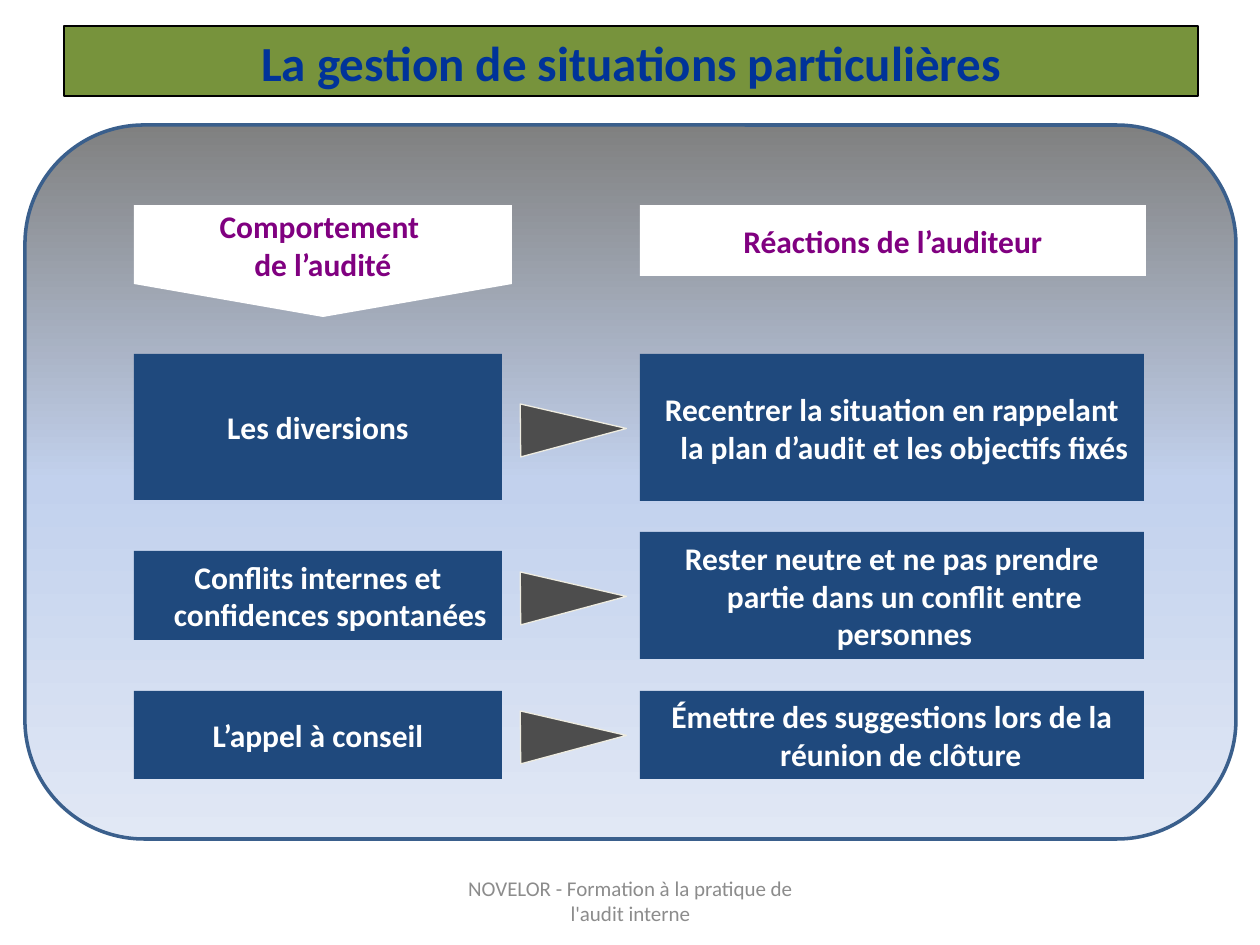
"""Build the slide on handling particular audit situations."""
from copy import deepcopy
from typing import NamedTuple, Optional

from pptx import Presentation
from pptx.dml.color import RGBColor
from pptx.enum.shapes import MSO_SHAPE
from pptx.enum.text import MSO_ANCHOR, PP_ALIGN
from pptx.util import Inches, Pt

EMU_PER_PX = Inches(1) / 126
FONT = "Calibri"
INDENT = 25
COLORS = {
    "title_fill": "77933C", "title_text": "003399", "black": "000000",
    "panel_line": "3A5F8C", "footer": "8C8C8C", "box": "1F497D",
    "white": "FFFFFF", "heading": "800080", "arrow": "4D4D4D",
    "arrow_line": "EEECE1",
}
PANEL_STOPS = [(0, "808080"), (0.5, "C2D1ED"), (1, "E1E8F5")]


class Box(NamedTuple):
    x: int
    y: int
    w: int
    h: int


class Row(NamedTuple):
    behaviour: str
    reaction: str
    left_y: int
    left_h: int
    right_y: int
    right_h: int
    arrow_y: int


ROWS = [
    Row("Les diversions",
        "Recentrer la situation en rappelant la plan d’audit et les objectifs fixés",
        354, 146, 354, 147, 430),
    Row("Conflits internes et confidences spontanées",
        "Rester neutre et ne pas prendre partie dans un conflit entre personnes",
        551, 89, 532, 127, 598),
    Row("L’appel à conseil",
        "Émettre des suggestions lors de la réunion de clôture ",
        691, 88, 691, 88, 737),
]
LEFT_X, LEFT_W = 134, 368
RIGHT_X, RIGHT_W = 640, 504
ARROW_X, ARROW_W, ARROW_H = 573, 53, 106


def px(n: int) -> int:
    return round(n * EMU_PER_PX)


def rgb(name: str) -> RGBColor:
    return RGBColor.from_string(COLORS[name])


def add_shape(s, kind: MSO_SHAPE, box: Box, fill: Optional[str] = None,
              line: Optional[str] = None, width: float = 0.75):
    sp = s.shapes.add_shape(kind, *map(px, box))
    sp.shadow.inherit = False
    if fill:
        sp.fill.solid()
        sp.fill.fore_color.rgb = rgb(fill)
    if line:
        sp.line.color.rgb = rgb(line)
        sp.line.width = Pt(width)
    else:
        sp.line.fill.background()
    return sp


def set_text(sp, text: str, size: int, color: str, bold: bool = True,
             wrap: bool = True, hanging: bool = False,
             anchor: MSO_ANCHOR = MSO_ANCHOR.MIDDLE) -> None:
    tf = sp.text_frame
    tf.text = text
    tf.word_wrap = wrap
    tf.vertical_anchor = anchor
    for p in tf.paragraphs:
        p.alignment = PP_ALIGN.CENTER
        if hanging:
            pPr = p._p.get_or_add_pPr()
            pPr.set("marL", str(px(INDENT)))
            pPr.set("indent", str(-px(INDENT)))
        for r in p.runs:
            r.font.name = FONT
            r.font.size = Pt(size)
            r.font.bold = bold
            r.font.color.rgb = rgb(color)


def add_panel(s) -> None:
    sp = add_shape(s, MSO_SHAPE.ROUNDED_RECTANGLE, Box(25, 125, 1211, 714),
                   line="panel_line", width=2)
    sp.fill.gradient()
    sp.fill.gradient_angle = 270
    stops = sp._element.spPr.xpath("a:gradFill/a:gsLst")[0]
    stops.append(deepcopy(stops[-1]))
    for stop, (position, color) in zip(sp.fill.gradient_stops, PANEL_STOPS):
        stop.position = position
        stop.color.rgb = RGBColor.from_string(color)


def add_heading(s, box: Box, text: str) -> None:
    sp = add_shape(s, MSO_SHAPE.RECTANGLE, box, "white")
    set_text(sp, text, 18, "heading", wrap=False)


def add_row(s, row: Row) -> None:
    for text, box in (
        (row.behaviour, Box(LEFT_X, row.left_y, LEFT_W, row.left_h)),
        (row.reaction, Box(RIGHT_X, row.right_y, RIGHT_W, row.right_h)),
    ):
        sp = add_shape(s, MSO_SHAPE.RECTANGLE, box, "box")
        set_text(sp, text, 18, "white", hanging=True)
    box = Box(ARROW_X - ARROW_W // 2, row.arrow_y - ARROW_H // 2, ARROW_W, ARROW_H)
    arrow = add_shape(s, MSO_SHAPE.ISOSCELES_TRIANGLE, box, "arrow", "arrow_line")
    arrow.adjustments[0] = 0.48
    arrow.rotation = 89.5


def main() -> None:
    prs = Presentation()
    prs.slide_width, prs.slide_height = Inches(10), Inches(7.5)
    s = prs.slides.add_slide(prs.slide_layouts[6])

    add_panel(s)
    footer = s.shapes.add_textbox(*map(px, Box(431, 876, 399, 50)))
    set_text(footer, "NOVELOR - Formation à la pratique de l'audit interne",
             12, "footer", bold=False)
    title = add_shape(s, MSO_SHAPE.RECTANGLE, Box(64, 26, 1134, 70),
                      "title_fill", "black")
    set_text(title, "La gestion de situations particulières", 28, "title_text",
             anchor=MSO_ANCHOR.TOP)

    add_heading(s, Box(LEFT_X, 205, 378, 79), "Comportement \nde l’audité")
    pointer = add_shape(s, MSO_SHAPE.ISOSCELES_TRIANGLE,
                        Box(LEFT_X, 284, 378, 33), "white")
    pointer.rotation = 180
    add_heading(s, Box(RIGHT_X, 205, 506, 71), "Réactions de l’auditeur")
    for row in ROWS:
        add_row(s, row)
    prs.save("out.pptx")


if __name__ == "__main__":
    main()
